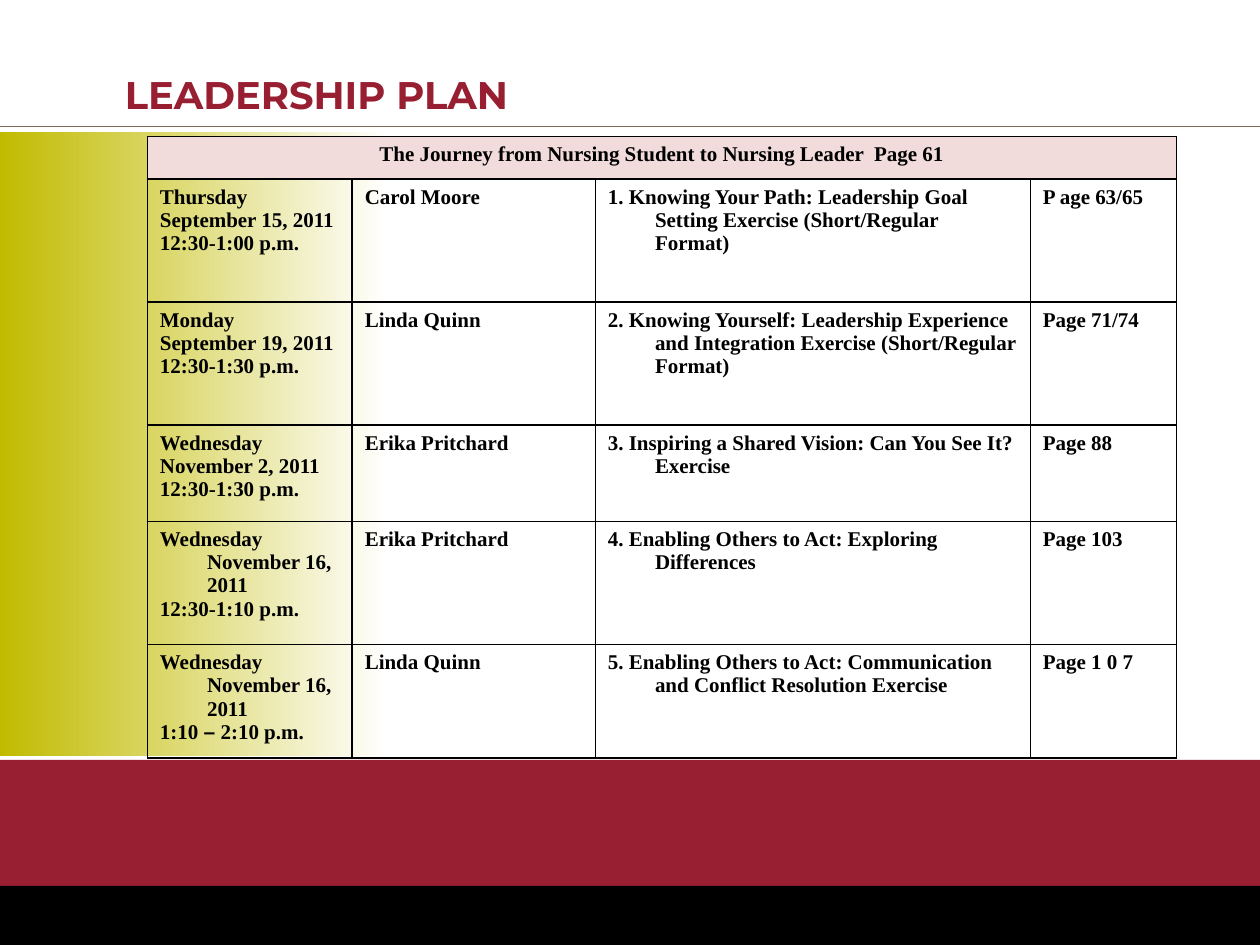
from itertools import groupby

from lxml.etree import SubElement
from pptx import Presentation
from pptx.dml.color import RGBColor
from pptx.enum.shapes import MSO_CONNECTOR as Connector, MSO_SHAPE as Shape
from pptx.enum.text import MSO_ANCHOR as Anchor, PP_ALIGN as Align
from pptx.oxml.ns import qn
from pptx.util import Cm, Pt

CRIMSON, BLACK, OLIVE, WHITE = "981E32", "000000", "C1BB00", "FFFFFF"
ROSE, BROWN = "F2DBDB", "7C6A55"

COLUMN_WIDTHS = [4.13, 4.9, 8.77, 2.95]
ROW_HEIGHTS = [0.86, 2.48, 2.48, 1.94, 2.48, 2.29]
HEADING = "The Journey from Nursing Student to Nursing Leader  Page 61"
SESSIONS = [
    ("Thursday\nSeptember 15, 2011\n12:30-1:00 p.m.", "Carol Moore",
     "1. Knowing Your Path: Leadership Goal Setting Exercise (Short/Regular Format)",
     "P age 63/65"),
    ("Monday\nSeptember 19, 2011\n12:30-1:30 p.m.", "Linda Quinn",
     "2. Knowing Yourself: Leadership Experience and Integration Exercise (Short/Regular Format)",
     "Page 71/74"),
    ("Wednesday\nNovember 2, 2011\n12:30-1:30 p.m.", "Erika Pritchard",
     "3. Inspiring a Shared Vision: Can You See It? Exercise", "Page 88"),
    ("Wednesday November 16, 2011\n12:30-1:10 p.m.", "Erika Pritchard",
     "4. Enabling Others to Act: Exploring Differences", "Page 103"),
    ("Wednesday November 16, 2011\n1:10 – 2:10 p.m.", "Linda Quinn",
     "5. Enabling Others to Act: Communication and Conflict Resolution Exercise",
     "Page 1 0 7"),
]


def color(code):
    return RGBColor.from_string(code)


class SlideBuilder:
    title_font, table_font, dash_font = "Montserrat", "Times New Roman", "Arial"
    title_size, table_size = Pt(22), Pt(12)
    hanging_indent = Cm(0.95)

    def __init__(self, slide):
        self.slide = slide

    def band(self, left, top, width, height, fill, fade_to=None):
        """Add a borderless rectangle, optionally fading from left to right."""
        shape = self.slide.shapes.add_shape(
            Shape.RECTANGLE, Cm(left), Cm(top), Cm(width), Cm(height))
        shape.shadow.inherit = False
        shape.line.fill.background()
        if fade_to:
            shape.fill.gradient()
            shape.fill.gradient_angle = 0
            for stop, position, code in zip(shape.fill.gradient_stops, (0, 1), (fill, fade_to)):
                stop.position = position
                stop.color.rgb = color(code)
        else:
            shape.fill.solid()
            shape.fill.fore_color.rgb = color(fill)

    def rule(self, left, top, width, code):
        line = self.slide.shapes.add_connector(
            Connector.STRAIGHT, Cm(left), Cm(top), Cm(left + width), Cm(top))
        line.line.color.rgb = color(code)
        line.line.width = Pt(0.5)
        SubElement(line._element.spPr, qn("a:effectLst"))

    def title(self, text, left, top, width, height):
        box = self.slide.shapes.add_textbox(Cm(left), Cm(top), Cm(width), Cm(height))
        frame = box.text_frame
        frame.word_wrap = True
        frame.vertical_anchor = Anchor.BOTTOM
        frame.text = text
        paragraph = frame.paragraphs[0]
        paragraph.line_spacing = 0.8
        self.style(paragraph.runs[0], self.title_font, self.title_size, CRIMSON)

    def style(self, run, name, size, code):
        run.font.name = name
        run.font.size = size
        run.font.bold = True
        run.font.color.rgb = color(code)

    def table(self, left, top, widths, heights, heading, rows):
        table = self.slide.shapes.add_table(
            len(heights), len(widths), Cm(left), Cm(top),
            Cm(sum(widths)), Cm(sum(heights))).table
        for column, width in zip(table.columns, widths):
            column.width = Cm(width)
        for row, height in zip(table.rows, heights):
            row.height = Cm(height)
        for cell in table.iter_cells():
            self.borders(cell)
            cell.fill.background()

        header = table.cell(0, 0)
        header.merge(table.cell(0, len(widths) - 1))
        header.fill.solid()
        header.fill.fore_color.rgb = color(ROSE)
        self.cell_text(header, heading, Align.CENTER)
        for row_index, row in enumerate(rows, start=1):
            for column_index, text in enumerate(row):
                self.cell_text(table.cell(row_index, column_index), text)

    def borders(self, cell):
        properties = cell._tc.get_or_add_tcPr()
        for side in ("a:lnL", "a:lnR", "a:lnT", "a:lnB"):
            line = SubElement(properties, qn(side), w=str(Pt(1)))
            SubElement(SubElement(line, qn("a:solidFill")), qn("a:srgbClr"), val=BLACK)

    def cell_text(self, cell, text, alignment=Align.LEFT):
        """Write hanging paragraphs, giving each dash its own font."""
        frame = cell.text_frame
        frame.text = text
        for paragraph, line in zip(frame.paragraphs, text.split("\n")):
            paragraph.alignment = alignment
            properties = paragraph._p.get_or_add_pPr()
            properties.set("marL", str(self.hanging_indent))
            properties.set("indent", str(-self.hanging_indent))
            paragraph.clear()
            for is_dash, letters in groupby(line, lambda letter: letter == "–"):
                run = paragraph.add_run()
                run.text = "".join(letters)
                self.style(run, self.dash_font if is_dash else self.table_font,
                           self.table_size, BLACK)


def main():
    presentation = Presentation()
    presentation.slide_width, presentation.slide_height = Cm(25.4), Cm(19.05)
    builder = SlideBuilder(presentation.slides.add_slide(presentation.slide_layouts[6]))
    builder.band(0, 2.67, 7.82, 12.57, OLIVE, fade_to=WHITE)
    builder.band(0, 15.32, 25.4, 2.55, CRIMSON)
    builder.band(0, 17.86, 25.4, 1.19, BLACK)
    builder.rule(0, 2.55, 25.4, BROWN)
    builder.table(2.97, 2.75, COLUMN_WIDTHS, ROW_HEIGHTS, HEADING, SESSIONS)
    builder.title("LEADERSHIP PLAN", 2.27, 0.61, 16.36, 1.88)
    presentation.save("out.pptx")


if __name__ == "__main__":
    main()
